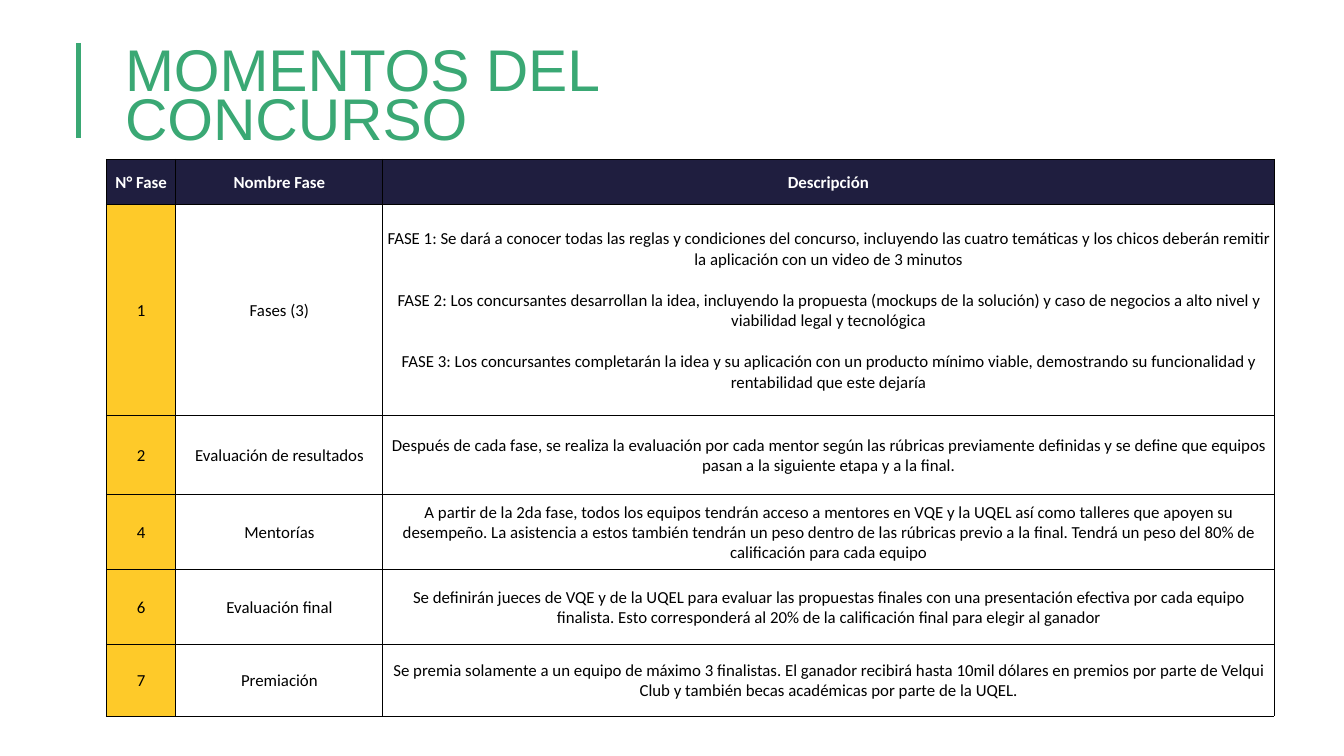
from lxml import etree
from pptx import Presentation
from pptx import util as u
from pptx.dml.color import RGBColor
from pptx.enum import shapes, text
from pptx.oxml import ns

GREEN = RGBColor(0x3A, 0xA8, 0x74)
NAVY = RGBColor(0x1F, 0x1E, 0x3F)
YELLOW = RGBColor(0xFE, 0xCA, 0x29)
WHITE = RGBColor(0xFF, 0xFF, 0xFF)
BLACK = RGBColor(0, 0, 0)

COLUMN_WIDTHS = [37.2, 110.9, 477.4]
ROW_HEIGHTS = [24.3, 113, 42.3, 40.2, 40.2, 38.2]
PHASES = [
    ("N° Fase", "Nombre Fase", "Descripción"),
    ("1", "Fases (3)",
     "FASE 1: Se dará a conocer todas las reglas y condiciones del concurso, incluyendo las cuatro "
     "temáticas y los chicos deberán remitir la aplicación con un video de 3 minutos\n"
     "FASE 2: Los concursantes desarrollan la idea, incluyendo la propuesta (mockups de la solución) "
     "y caso de negocios a alto nivel y viabilidad legal y tecnológica\n"
     "FASE 3: Los concursantes completarán la idea y su aplicación con un producto mínimo viable, "
     "demostrando su funcionalidad y rentabilidad que este dejaría"),
    ("2", "Evaluación de resultados",
     "Después de cada fase, se realiza la evaluación por cada mentor según las rúbricas previamente "
     "definidas y se define que equipos pasan a la siguiente etapa y a la final."),
    ("4", "Mentorías",
     "A partir de la 2da fase, todos los equipos tendrán acceso a mentores en VQE y la UQEL así como "
     "talleres que apoyen su desempeño. La asistencia a estos también tendrán un peso dentro de las "
     "rúbricas previo a la final. Tendrá un peso del 80% de calificación para cada equipo"),
    ("6", "Evaluación final",
     "Se definirán jueces de VQE y de la UQEL para evaluar las propuestas finales con una presentación "
     "efectiva por cada equipo finalista. Esto corresponderá al 20% de la calificación final para "
     "elegir al ganador"),
    ("7", "Premiación",
     "Se premia solamente a un equipo de máximo 3 finalistas. El ganador recibirá hasta 10mil dólares "
     "en premios por parte de Velqui Club y también becas académicas por parte de la UQEL."),
]


def add_title(slide, wording):
    """Place and format the slide title."""
    title = slide.shapes.title
    title.left, title.top, title.width, title.height = u.Pt(62), u.Pt(33), u.Pt(388), u.Pt(42.5)
    frame = title.text_frame
    frame.text = wording
    frame.word_wrap = True
    frame.auto_size = text.MSO_AUTO_SIZE.NONE
    frame.vertical_anchor = text.MSO_ANCHOR.MIDDLE
    frame.margin_left = frame.margin_right = u.Pt(5)
    frame.margin_top = frame.margin_bottom = u.Pt(3)
    heading = frame.paragraphs[0]
    heading.alignment = text.PP_ALIGN.LEFT
    heading.line_spacing = 0.7
    font = heading.runs[0].font
    font.name, font.size, font.color.rgb = "Arial", u.Pt(31.5), GREEN


def add_accent(slide):
    """Draw the vertical rule beside the title."""
    accent = slide.shapes.add_connector(
        shapes.MSO_CONNECTOR.STRAIGHT, u.Pt(42), u.Pt(23), u.Pt(42), u.Pt(74))
    accent.line.color.rgb = GREEN
    accent.line.width = u.Pt(3)
    etree.SubElement(accent.element.spPr, ns.qn("a:effectLst"))


def add_borders(cell):
    """Give a cell a thin black border on all sides."""
    properties = cell._tc.get_or_add_tcPr()
    for side in ("lnL", "lnR", "lnT", "lnB"):
        border = etree.SubElement(properties, ns.qn(f"a:{side}"), w=str(u.Pt(0.5)))
        fill = etree.SubElement(border, ns.qn("a:solidFill"))
        etree.SubElement(fill, ns.qn("a:srgbClr"), val=str(BLACK))


def fill_cell(cell, wording, background, is_header):
    """Write and format one table cell."""
    add_borders(cell)
    if background is None:
        cell.fill.background()
    else:
        cell.fill.solid()
        cell.fill.fore_color.rgb = background
    cell.margin_left = cell.margin_right = cell.margin_top = u.Pt(0.7)
    cell.margin_bottom = 0
    cell.vertical_anchor = text.MSO_ANCHOR.MIDDLE
    cell.text_frame.text = wording
    for index, paragraph in enumerate(cell.text_frame.paragraphs):
        paragraph.alignment = text.PP_ALIGN.CENTER
        if index:
            paragraph.space_before = u.Pt(11)
        font = paragraph.runs[0].font
        font.name, font.size, font.bold = "Calibri", u.Pt(9), is_header
        font.color.rgb = WHITE if is_header else BLACK


def add_phases(slide):
    """Build the table of contest phases."""
    phases = slide.shapes.add_table(
        len(PHASES), len(COLUMN_WIDTHS), u.Pt(57), u.Pt(85.4),
        u.Pt(sum(COLUMN_WIDTHS)), u.Pt(sum(ROW_HEIGHTS))).table
    phases.horz_banding = False
    for column, width in zip(phases.columns, COLUMN_WIDTHS):
        column.width = u.Pt(width)
    for row, height in zip(phases.rows, ROW_HEIGHTS):
        row.height = u.Pt(height)
    for row, phase in enumerate(PHASES):
        for column, wording in enumerate(phase):
            background = NAVY if row == 0 else YELLOW if column == 0 else None
            fill_cell(phases.cell(row, column), wording, background, row == 0)


def main():
    """Build and save the slide."""
    deck = Presentation()
    deck.slide_width, deck.slide_height = u.Pt(720), u.Pt(405)
    slide = deck.slides.add_slide(deck.slide_layouts[5])
    add_phases(slide)
    add_title(slide, "MOMENTOS DEL CONCURSO")
    add_accent(slide)
    deck.save("out.pptx")


if __name__ == "__main__":
    main()
